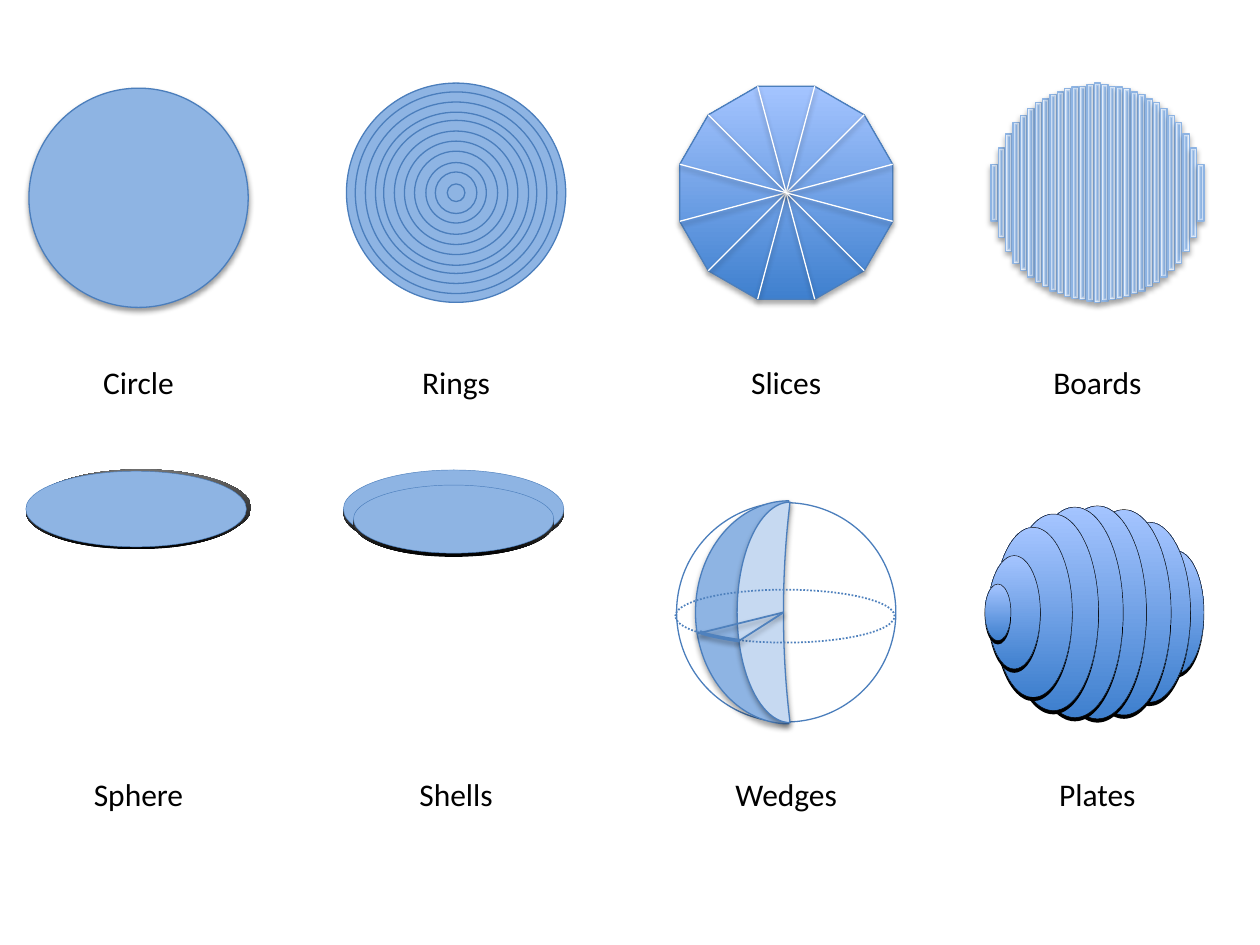
from dataclasses import dataclass
from math import cos, radians, sin

from lxml.etree import SubElement
from pptx import Presentation
from pptx.dml.color import RGBColor
from pptx.enum.dml import MSO_LINE
from pptx.enum.shapes import MSO_CONNECTOR, MSO_SHAPE as Kind
from pptx.enum.text import MSO_ANCHOR, PP_ALIGN
from pptx.oxml.ns import qn
from pptx.util import Inches, Pt


@dataclass(frozen=True)
class Theme:
    font: str = "Calibri"
    label_size: float = 18
    text: str = "000000"
    face: str = "8EB4E3"
    pale: str = "C6D9F1"
    edge: str = "4B7EBC"
    accent: str = "4F81BD"
    white: str = "FFFFFF"
    shade: tuple = ("3F80CE", "A4C4FF")
    board: tuple = ("8EB4E3", "FFFFFF")
    rim: tuple = ("000000", "707070")
    thin: float = 0.75
    medium: float = 1
    hairline: float = 0.25


THEME = Theme()

# Content: labels in a grid of two rows and four columns
LABELS = [["Circle", "Rings", "Slices", "Boards"],
          ["Sphere", "Shells", "Wedges", "Plates"]]
COLUMNS = [1.1, 3.62, 6.24, 8.71]
ROWS = [1.53, 4.86]
LABEL_ROWS = [3.03, 6.3]
DIAMETER = 1.74

RING_SIZES = [1.74, 1.6, 1.44, 1.28, 1.15, 0.98, 0.82, 0.66, 0.48, 0.33, 0.14]
SLICE_ANGLES = range(15, 180, 30)
# Board heights from the outside to the middle; the other half mirrors them
BOARD_HEIGHTS = [0.45, 0.71, 0.93, 1.12, 1.23, 1.34, 1.43, 1.49,
                 1.56, 1.6, 1.65, 1.68, 1.69, 1.72, 1.74]
# Tilted discs, back to front: centre x, centre y, width, height, is a face
SPHERE_DISCS = [(1.12, 4.03, 1.75, 0.61, False),
                (1.08, 4.06, 1.75, 0.6, False),
                (1.08, 4.04, 1.75, 0.6, True)]
SHELL_DISCS = [(3.6, 4.07, 1.75, 0.62, False),
               (3.6, 4.04, 1.75, 0.62, True),
               (3.6, 4.15, 1.59, 0.54, False),
               (3.6, 4.12, 1.59, 0.54, True)]
# Plates, back to front: centre x, diameter
PLATES = [(9.33, 0.98), (9.12, 1.43), (8.92, 1.63), (8.71, 1.69), (8.53, 1.67),
          (8.36, 1.56), (8.2, 1.35), (8.05, 0.9), (7.92, 0.45)]
PLATE_SQUEEZE = 0.46
# Wedge faces: left, width, height, colour
WEDGE_FACES = [(5.52, 0.74, 1.77, THEME.face), (5.85, 0.42, 1.75, THEME.pale)]
WEDGE_TIP = (6.22, 4.86)
WEDGE_CORNERS = [(5.53, 5.03), (5.86, 5.09)]


def color(value):
    return RGBColor.from_string(value)


def set_shadow(shape, strength):
    """Leave the shape without effects, or give it a soft shadow below."""
    properties = shape._element.spPr
    effects = properties.find(qn("a:effectLst"))
    if effects is None:
        effects = SubElement(properties, qn("a:effectLst"))
    if strength:
        outer = SubElement(effects, qn("a:outerShdw"), blurRad=str(Pt(3.1)),
                           dist=str(Pt(1.8)), dir="5400000", rotWithShape="0")
        black = SubElement(outer, qn("a:srgbClr"), val="000000")
        SubElement(black, qn("a:alpha"), val=str(strength * 1000))


def set_fill(shape, fill, angle):
    if fill is None:
        shape.fill.background()
    elif isinstance(fill, str):
        shape.fill.solid()
        shape.fill.fore_color.rgb = color(fill)
    else:
        shape.fill.gradient()
        shape.fill.gradient_angle = angle
        for stop, value in zip(shape.fill.gradient_stops, fill):
            stop.color.rgb = color(value)


def draw(shapes, kind, x, y, width, height, fill=None, line=THEME.edge,
         weight=THEME.thin, shadow=0, angle=90):
    """Draw a preset shape around its centre (x, y)."""
    shape = shapes.add_shape(kind, Inches(x - width / 2), Inches(y - height / 2),
                             Inches(width), Inches(height))
    set_fill(shape, fill, angle)
    if line is None:
        shape.line.fill.background()
    else:
        shape.line.color.rgb = color(line)
        shape.line.width = Pt(weight)
    shape.shadow.inherit = False
    set_shadow(shape, shadow)
    return shape


def draw_line(shapes, start, end, line, weight):
    points = [Inches(value) for value in (*start, *end)]
    connector = shapes.add_connector(MSO_CONNECTOR.STRAIGHT, *points)
    connector.line.color.rgb = color(line)
    connector.line.width = Pt(weight)
    set_shadow(connector, 38)


def add_label(shapes, text, x, y, width=1.03, height=0.4, size=THEME.label_size,
              fill=THEME.text, align=PP_ALIGN.CENTER):
    box = shapes.add_textbox(Inches(x - width / 2), Inches(y - height / 2),
                             Inches(width), Inches(height))
    frame = box.text_frame
    frame.word_wrap = False
    frame.vertical_anchor = MSO_ANCHOR.MIDDLE
    paragraph = frame.paragraphs[0]
    paragraph.alignment = align
    run = paragraph.add_run()
    run.text = text
    run.font.name = THEME.font
    run.font.size = Pt(size)
    run.font.color.rgb = color(fill)


def draw_rings(shapes, x, y):
    for size in RING_SIZES:
        draw(shapes, Kind.OVAL, x, y, size, size, THEME.face)


def draw_slices(shapes, x, y, size=1.69):
    draw(shapes, Kind.DODECAGON, x, y, size, size, THEME.shade, shadow=35)
    radius = size / 2 / cos(radians(15))
    for angle in SLICE_ANGLES:
        dx, dy = radius * cos(radians(angle)), radius * sin(radians(angle))
        draw_line(shapes, (x - dx, y + dy), (x + dx, y - dy),
                  THEME.white, THEME.thin)


def draw_boards(shapes, x, y, pitch=0.0586, width=0.05):
    heights = BOARD_HEIGHTS + BOARD_HEIGHTS[-2::-1]
    middle = len(heights) // 2
    for index, height in enumerate(heights):
        board = draw(shapes, Kind.RECTANGLE, x + (index - middle) * pitch, y,
                     width, height, THEME.board, THEME.face, shadow=35)
        gradient = board._element.spPr.find(qn("a:gradFill"))
        gradient.remove(gradient.find(qn("a:lin")))
        center = SubElement(gradient, qn("a:path"), path="shape")
        SubElement(center, qn("a:fillToRect"),
                   l="50000", t="50000", r="50000", b="50000")


def draw_discs(shapes, discs):
    for x, y, width, height, is_face in discs:
        if is_face:
            draw(shapes, Kind.OVAL, x, y, width, height, THEME.face,
                 weight=THEME.hairline)
        else:
            draw(shapes, Kind.OVAL, x, y, width, height, THEME.rim,
                 line=None, angle=90)


def draw_wedges(shapes, x, y):
    draw(shapes, Kind.OVAL, x, y, DIAMETER, DIAMETER)
    for left, width, height, fill in WEDGE_FACES:
        moon = draw(shapes, Kind.MOON, left + width / 2, y, width, height,
                    fill, shadow=35)
        moon.adjustments[0] = 0.875
    equator = draw(shapes, Kind.OVAL, x - 0.01, y + 0.03, DIAMETER, 0.42,
                   line=THEME.accent, weight=THEME.medium)
    equator.line.dash_style = MSO_LINE.ROUND_DOT
    for corner in WEDGE_CORNERS:
        draw_line(shapes, corner, WEDGE_TIP, THEME.accent, THEME.medium)
    arc = draw(shapes, Kind.ARC, 5.87, 5.06, 0.64, 0.05, line=THEME.accent,
               weight=2, shadow=38)
    arc.rotation = 188.6


def draw_plates(shapes, y):
    for x, size in PLATES:
        width = size * PLATE_SQUEEZE
        draw(shapes, Kind.OVAL, x, y + 0.03, width, size, THEME.text, line=None)
        draw(shapes, Kind.OVAL, x, y, width, size, THEME.shade,
             line=THEME.text, weight=THEME.hairline)


def main():
    presentation = Presentation()
    presentation.slide_width, presentation.slide_height = Inches(10), Inches(7.5)
    slide = presentation.slides.add_slide(presentation.slide_layouts[6])
    shapes = slide.shapes
    top, bottom = ROWS
    circle, rings, slices, boards = COLUMNS

    def group():
        return shapes.add_group_shape().shapes

    # Flat figures
    draw(shapes, Kind.OVAL, circle, top + 0.04, DIAMETER, DIAMETER,
         THEME.face, shadow=38)
    draw_rings(group(), rings, top)
    draw_slices(group(), slices, top)
    draw_boards(group(), boards, top)

    # Solid figures
    draw_discs(group(), SPHERE_DISCS)
    draw_discs(group(), SHELL_DISCS)
    draw_wedges(group(), slices, bottom)
    draw_plates(group(), bottom)

    # Labels
    for y, names in zip(LABEL_ROWS, LABELS):
        for x, name in zip(COLUMNS, names):
            add_label(shapes, name, x, y)
    presentation.save("out.pptx")


if __name__ == "__main__":
    main()
